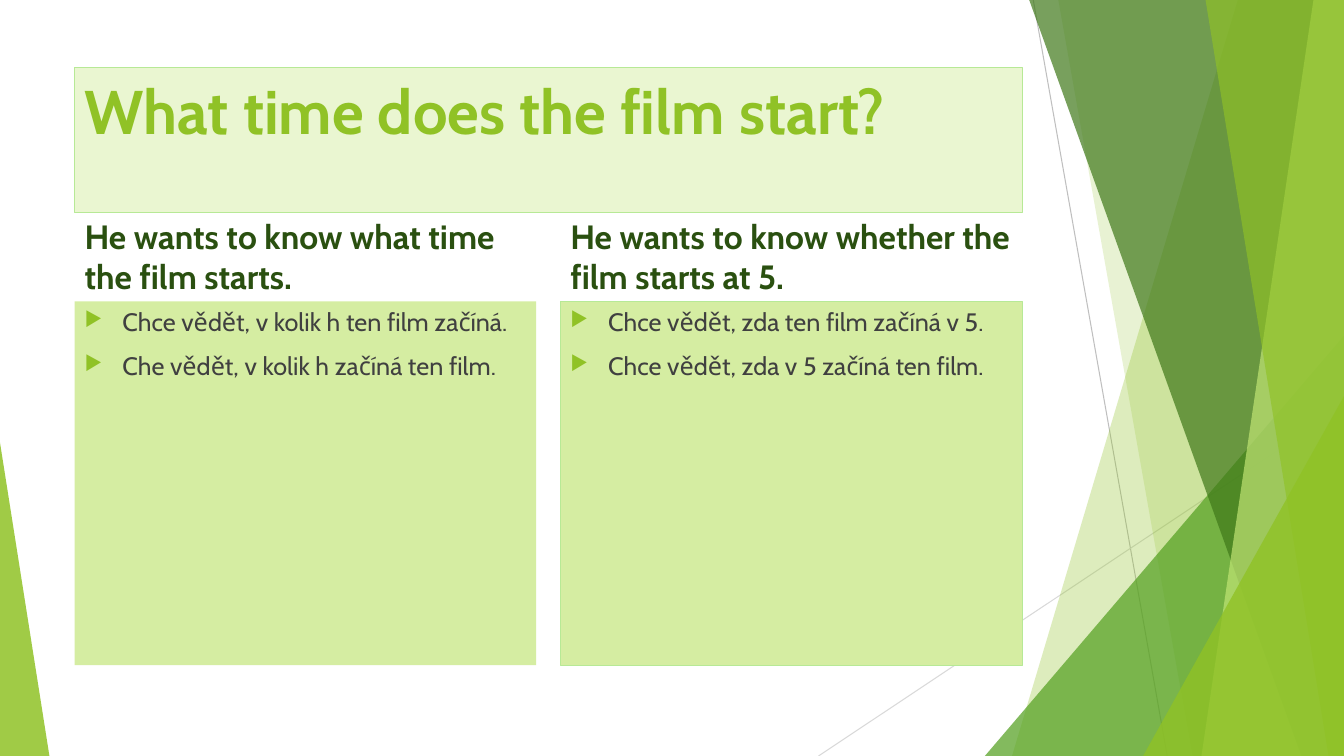
"""Build a slide on indirect questions, laid out in percent of the slide's size."""
from typing import NamedTuple, Optional

import lxml.etree
import pptx
import pptx.dml.color
import pptx.enum.shapes
import pptx.enum.text
import pptx.oxml.ns
import pptx.util

COLORS = {
    "lime": "90C226", "green": "54A021", "forest": "3F7819", "pale": "C0E474",
    "title": "EAF6D1", "panel": "D5EDA2", "border": "B7E996", "heading": "2A5010",
    "body": "404040", "gray": "BFBFBF", "light": "D9D9D9",
}
FONT = "Cabin"
WIDTH, HEIGHT = pptx.util.Inches(13.333), pptx.util.Inches(7.5)
LEFT, TITLE_W, COLUMN_W = 5.55, 70.5, 34.35
PITCH = TITLE_W - COLUMN_W
TITLE_Y, TITLE_H = 8.93, 19.2
HEADING_Y, HEADING_H = 28.13, 11.73
PANEL_Y, PANEL_H = 39.87, 48.13


class Ray(NamedTuple):
    x1: float
    y1: float
    x2: float
    y2: float
    color: str


class Facet(NamedTuple):
    top_x: float
    bottom_x: float
    color: str
    alpha: int


class Corner(NamedTuple):
    x: float
    y: float
    w: float
    apex: int
    color: str
    alpha: int


class Block(NamedTuple):
    x: float
    y: float
    w: float
    h: float
    lines: tuple[str, ...]
    size: int
    color: str
    bold: bool = True
    fill: Optional[str] = None
    line: Optional[str] = None
    bullets: bool = False
    before: int = 10
    anchor: pptx.enum.text.MSO_ANCHOR = pptx.enum.text.MSO_ANCHOR.TOP


class Column(NamedTuple):
    heading: str
    lines: tuple[str, ...]
    border: Optional[str]


RAYS = (Ray(76.88, 0, 86.85, 100, "gray"), Ray(100, 53.73, 60.9, 100, "light"))
DECOR = (
    Facet(92.1, 75.3, "lime", 30),
    Facet(78.75, 88.73, "lime", 20),
    Corner(73.28, 44.4, 26.72, 1, "green", 72),
    Facet(76.58, 96.83, "forest", 70),
    Facet(97.73, 89.4, "pale", 70),
    Facet(89.7, 98.85, "lime", 65),
    Corner(85.05, 52.4, 14.95, 1, "lime", 80),
    Corner(0, 58.53, 3.68, 0, "lime", 85),
)
COLUMNS = (
    Column("He wants to know what time the film starts.",
           ("Chce vědět, v kolik h ten film začíná.",
            "Che vědět, v kolik h začíná ten film."), None),
    Column("He wants to know whether the film starts at 5.",
           ("Chce vědět, zda ten film začíná v 5.",
            "Chce vědět, zda v 5 začíná ten film."), "border"),
)


def px(share: float) -> int:
    return round(WIDTH * share / 100)


def py(share: float) -> int:
    return round(HEIGHT * share / 100)


def rgb(name: str) -> pptx.dml.color.RGBColor:
    return pptx.dml.color.RGBColor.from_string(COLORS[name])


def add_node(parent, tag: str, **attrs: str):
    return lxml.etree.SubElement(parent, pptx.oxml.ns.qn(tag), attrs)


def paint(sp, fill: str, line: Optional[str] = None, alpha: int = 100) -> None:
    sp.shadow.inherit = False
    sp.fill.solid()
    sp.fill.fore_color.rgb = rgb(fill)
    if alpha < 100:
        add_node(sp._element.spPr.xpath("./a:solidFill/a:srgbClr")[0],
                 "a:alpha", val=str(alpha * 1000))
    if line:
        sp.line.color.rgb = rgb(line)
        sp.line.width = pptx.util.Pt(0.75)
    else:
        sp.line.fill.background()


def draw_ray(s, ray: Ray) -> None:
    cxn = s.shapes.add_connector(
        pptx.enum.shapes.MSO_CONNECTOR.STRAIGHT,
        px(ray.x1), py(ray.y1), px(ray.x2), py(ray.y2))
    cxn.line.color.rgb = rgb(ray.color)
    cxn.line.width = pptx.util.Pt(0.75)
    add_node(cxn._element.spPr, "a:effectLst")


def draw_facet(s, facet: Facet) -> None:
    builder = s.shapes.build_freeform(px(facet.top_x), 0)
    builder.add_line_segments(
        ((WIDTH, 0), (WIDTH, HEIGHT), (px(facet.bottom_x), HEIGHT)), close=True)
    paint(builder.convert_to_shape(), facet.color, alpha=facet.alpha)


def draw_corner(s, corner: Corner) -> None:
    sp = s.shapes.add_shape(
        pptx.enum.shapes.MSO_SHAPE.ISOSCELES_TRIANGLE,
        px(corner.x), py(corner.y), px(corner.w), py(100 - corner.y))
    sp.adjustments[0] = corner.apex
    paint(sp, corner.color, alpha=corner.alpha)


def add_bullet(p) -> None:
    pPr = p._p.get_or_add_pPr()
    pPr.set("marL", str(pptx.util.Pt(27)))
    pPr.set("indent", str(-pptx.util.Pt(27)))
    add_node(add_node(pPr, "a:buClr"), "a:srgbClr", val=COLORS["lime"])
    add_node(pPr, "a:buSzPct", val="80000")
    add_node(pPr, "a:buChar", char="▶")


def draw_block(s, block: Block) -> None:
    box = px(block.x), py(block.y), px(block.w), py(block.h)
    if block.fill:
        sp = s.shapes.add_shape(pptx.enum.shapes.MSO_SHAPE.RECTANGLE, *box)
        paint(sp, block.fill, block.line)
    else:
        sp = s.shapes.add_textbox(*box)
    tf = sp.text_frame
    tf.word_wrap = True
    tf.vertical_anchor = block.anchor
    for i, line in enumerate(block.lines):
        p = tf.add_paragraph() if i else tf.paragraphs[0]
        p.text = line
        p.alignment = pptx.enum.text.PP_ALIGN.LEFT
        p.space_before = pptx.util.Pt(block.before)
        if block.bullets:
            add_bullet(p)
        p.font.name = FONT
        p.font.size = pptx.util.Pt(block.size)
        p.font.bold = block.bold
        p.font.color.rgb = rgb(block.color)


def main() -> None:
    prs = pptx.Presentation()
    prs.slide_width, prs.slide_height = WIDTH, HEIGHT
    s = prs.slides.add_slide(prs.slide_layouts[6])
    for ray in RAYS:
        draw_ray(s, ray)
    for item in DECOR:
        if isinstance(item, Facet):
            draw_facet(s, item)
        else:
            draw_corner(s, item)
    draw_block(s, Block(LEFT, TITLE_Y, TITLE_W, TITLE_H, ("What time does the film start?",),
                        44, "lime", fill="title", line="border", before=0))
    for i, column in enumerate(COLUMNS):
        x = LEFT + i * PITCH
        draw_block(s, Block(x, HEADING_Y, COLUMN_W, HEADING_H, (column.heading,), 24, "heading",
                            anchor=pptx.enum.text.MSO_ANCHOR.BOTTOM))
        draw_block(s, Block(x, PANEL_Y, COLUMN_W, PANEL_H, column.lines, 18, "body", bold=False,
                            fill="panel", line=column.border, bullets=True))
    prs.save("out.pptx")


if __name__ == "__main__":
    main()
